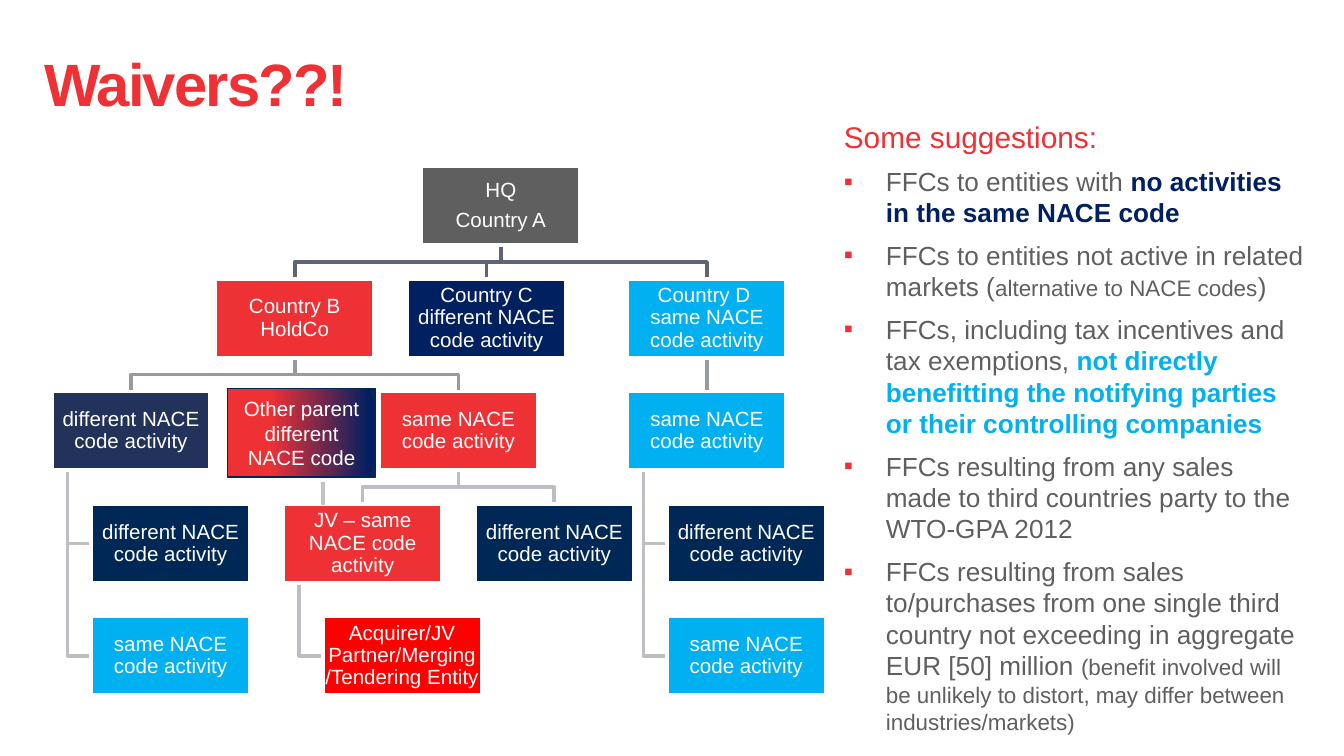
from dataclasses import dataclass

from lxml import etree
from pptx import Presentation
from pptx.dml.color import RGBColor
from pptx.enum import shapes, text
from pptx.oxml.ns import qn
from pptx.util import Pt

COLORS = {
    "red": "EE3135", "bright red": "FF0000", "grey": "5F5F5F", "white": "FFFFFF",
    "slate": "22325A", "navy": "002060", "ink": "002856", "sky": "00B0F0",
    "level 1": "5E6377", "level 2": "9799A3", "level 3": "BDBEC3", "drop": "C2C3C4",
}
FONT = "Arial"
BOX_WIDTH, BOX_HEIGHT = 85, 42.3
TOP_ROW, ROW_PITCH = 89.1, 60.3
HANG_INSET = 8.5
DIFFERENT = "different NACE code activity"
SAME = "same NACE code activity"


@dataclass
class Entity:
    label: str
    left: float
    row: int
    color: str
    parent: str = ""
    hangs: bool = False

    @property
    def top(self) -> float:
        return TOP_ROW + self.row * ROW_PITCH

    @property
    def bottom(self) -> float:
        return self.top + BOX_HEIGHT

    @property
    def center(self) -> float:
        return self.left + BOX_WIDTH / 2


@dataclass
class Phrase:
    wording: str
    color: str = "grey"
    size: float = 14
    bold: bool = False
    breaks_after: bool = False


ENTITIES = {
    "hq": Entity("HQ\nCountry A", 225.8, 0, "grey"),
    "b": Entity("Country B HoldCo", 115.4, 1, "red", "hq"),
    "c": Entity("Country C different NACE code activity", 218.2, 1, "navy", "hq"),
    "d": Entity("Country D \vsame NACE code activity", 336.2, 1, "sky", "hq"),
    "b different": Entity(DIFFERENT, 27.7, 2, "slate", "b"),
    "b same": Entity(SAME, 203.1, 2, "red", "b"),
    "d same": Entity(SAME, 336.2, 2, "sky", "d"),
    "b leaf 1": Entity(DIFFERENT, 48.9, 3, "ink", "b different", True),
    "b leaf 2": Entity(SAME, 48.9, 4, "sky", "b different", True),
    "jv": Entity("JV – same NACE code activity", 151.8, 3, "red", "b same"),
    "jv sibling": Entity(DIFFERENT, 254.5, 3, "ink", "b same"),
    "acquirer": Entity("Acquirer/JV Partner/Merging /Tendering Entity",
                       172.9, 4, "bright red", "jv", True),
    "d leaf 1": Entity(DIFFERENT, 357.3, 3, "ink", "d same", True),
    "d leaf 2": Entity(SAME, 357.3, 4, "sky", "d same", True),
}

SUGGESTIONS = [
    [Phrase("FFCs to entities with "),
     Phrase("no activities in the same NACE code", "navy", bold=True)],
    [Phrase("FFCs to entities not active in related markets ("),
     Phrase("alternative to NACE codes", size=12), Phrase(")")],
    [Phrase("FFCs, including tax incentives and tax exemptions, "),
     Phrase("not directly benefitting the notifying parties ", "sky", bold=True,
            breaks_after=True),
     Phrase("or their controlling companies", "sky", bold=True)],
    [Phrase("FFCs resulting from any sales made to third countries party to the WTO-GPA 2012")],
    [Phrase("FFCs resulting from sales to/purchases from one single third country "
            "not exceeding in aggregate EUR [50] million "),
     Phrase("(benefit involved will be unlikely to distort, may differ between "
            "industries/markets)", size=12)],
]


def rgb(color: str) -> RGBColor:
    return RGBColor.from_string(COLORS[color])


def set_font(font, size: float, color: str, bold: bool = False) -> None:
    font.name, font.size, font.bold = FONT, Pt(size), bold
    font.color.rgb = rgb(color)


def set_line(line, color: str, width: float) -> None:
    line.color.rgb = rgb(color)
    line.width = Pt(width)


def set_margins(frame, margin: float) -> None:
    frame.margin_left = frame.margin_right = Pt(margin)
    frame.margin_top = frame.margin_bottom = Pt(margin)


def draw_branch(slide, child: Entity) -> None:
    """Join a box to its parent: an elbow from above, or a rail at the side."""
    parent = ENTITIES[child.parent]
    if child.hangs:
        rail, middle = parent.left + HANG_INSET, child.top + BOX_HEIGHT / 2
        route = [(rail, parent.bottom), (rail, middle), (child.left, middle)]
    else:
        bend = (parent.bottom + child.top) / 2
        route = [(parent.center, parent.bottom), (parent.center, bend),
                 (child.center, bend), (child.center, child.top)]
    points = [(Pt(x), Pt(y)) for x, y in route]
    builder = slide.shapes.build_freeform(*points[0])
    builder.add_line_segments(points[1:], close=False)
    branch = builder.convert_to_shape()
    branch.shadow.inherit = False
    branch.fill.background()
    set_line(branch.line, f"level {min(parent.row + 1, 3)}", 2)


def add_box(slide, label: str, left: float, top: float, width: float, height: float):
    box = slide.shapes.add_shape(shapes.MSO_SHAPE.RECTANGLE,
                                 Pt(left), Pt(top), Pt(width), Pt(height))
    box.shadow.inherit = False
    frame = box.text_frame
    frame.word_wrap = True
    frame.vertical_anchor = text.MSO_ANCHOR.MIDDLE
    frame.text = label
    for paragraph in frame.paragraphs:
        paragraph.alignment = text.PP_ALIGN.CENTER
        set_font(paragraph.font, 11, "white")
    return box


def draw_entity(slide, entity: Entity) -> None:
    box = add_box(slide, entity.label, entity.left, entity.top, BOX_WIDTH, BOX_HEIGHT)
    box.fill.solid()
    box.fill.fore_color.rgb = rgb(entity.color)
    set_line(box.line, "white", 2)
    set_margins(box.text_frame, 0.55)
    for paragraph in box.text_frame.paragraphs:
        paragraph.line_spacing = 0.9
        paragraph.space_after = Pt(3.85)


def draw_other_parent(slide) -> None:
    box = add_box(slide, "Other parent different NACE code", 122, 208.2, 79.2, 47.3)
    box.fill.gradient()
    box.fill.gradient_angle = 0
    for stop, color, position in zip(box.fill.gradient_stops, ("red", "navy"), (0.29, 0.96)):
        stop.color.rgb = rgb(color)
        stop.position = position
    set_line(box.line, "ink", 0.75)
    drop = slide.shapes.add_connector(shapes.MSO_CONNECTOR.STRAIGHT,
                                      Pt(173), Pt(258.5), Pt(173), Pt(270.7))
    set_line(drop.line, "drop", 1.75)
    etree.SubElement(drop.element.spPr, qn("a:effectLst"))


def draw_title(slide) -> None:
    frame = slide.shapes.add_textbox(Pt(23.8), Pt(32.4), Pt(670), Pt(36)).text_frame
    frame.word_wrap = True
    frame.vertical_anchor = text.MSO_ANCHOR.TOP
    set_margins(frame, 0)
    heading = frame.paragraphs[0]
    heading.line_spacing = 0.8
    run = heading.add_run()
    run.text = "Waivers??!"
    set_font(run.font, 32, "red", bold=True)
    run.font._element.set("spc", "-100")


def add_bullet(paragraph) -> None:
    properties = paragraph._p.get_or_add_pPr()
    properties.set("marL", str(Pt(22.5)))
    properties.set("indent", str(-Pt(22.5)))
    tint = etree.SubElement(properties, qn("a:buClr"))
    etree.SubElement(tint, qn("a:srgbClr"), val=COLORS["red"])
    etree.SubElement(properties, qn("a:buFont"), typeface=FONT)
    etree.SubElement(properties, qn("a:buChar"), char="▪")


def draw_suggestions(slide) -> None:
    frame = slide.shapes.add_textbox(Pt(445), Pt(59.8), Pt(261.5), Pt(340.6)).text_frame
    frame.word_wrap = True
    lead = [Phrase("Some suggestions:", "red", 16)]
    for index, phrases in enumerate([lead, *SUGGESTIONS]):
        paragraph = frame.add_paragraph() if index else frame.paragraphs[0]
        paragraph.space_before = paragraph.space_after = Pt(3)
        if index:
            add_bullet(paragraph)
        for phrase in phrases:
            run = paragraph.add_run()
            run.text = phrase.wording
            set_font(run.font, phrase.size, phrase.color, phrase.bold)
            if phrase.breaks_after:
                paragraph.add_line_break()


def main() -> None:
    deck = Presentation()
    deck.slide_width, deck.slide_height = Pt(720), Pt(405)
    slide = deck.slides.add_slide(deck.slide_layouts[6])
    draw_title(slide)
    for entity in ENTITIES.values():
        if entity.parent:
            draw_branch(slide, entity)
    for entity in ENTITIES.values():
        draw_entity(slide, entity)
    draw_suggestions(slide)
    draw_other_parent(slide)
    deck.save("out.pptx")


if __name__ == "__main__":
    main()
